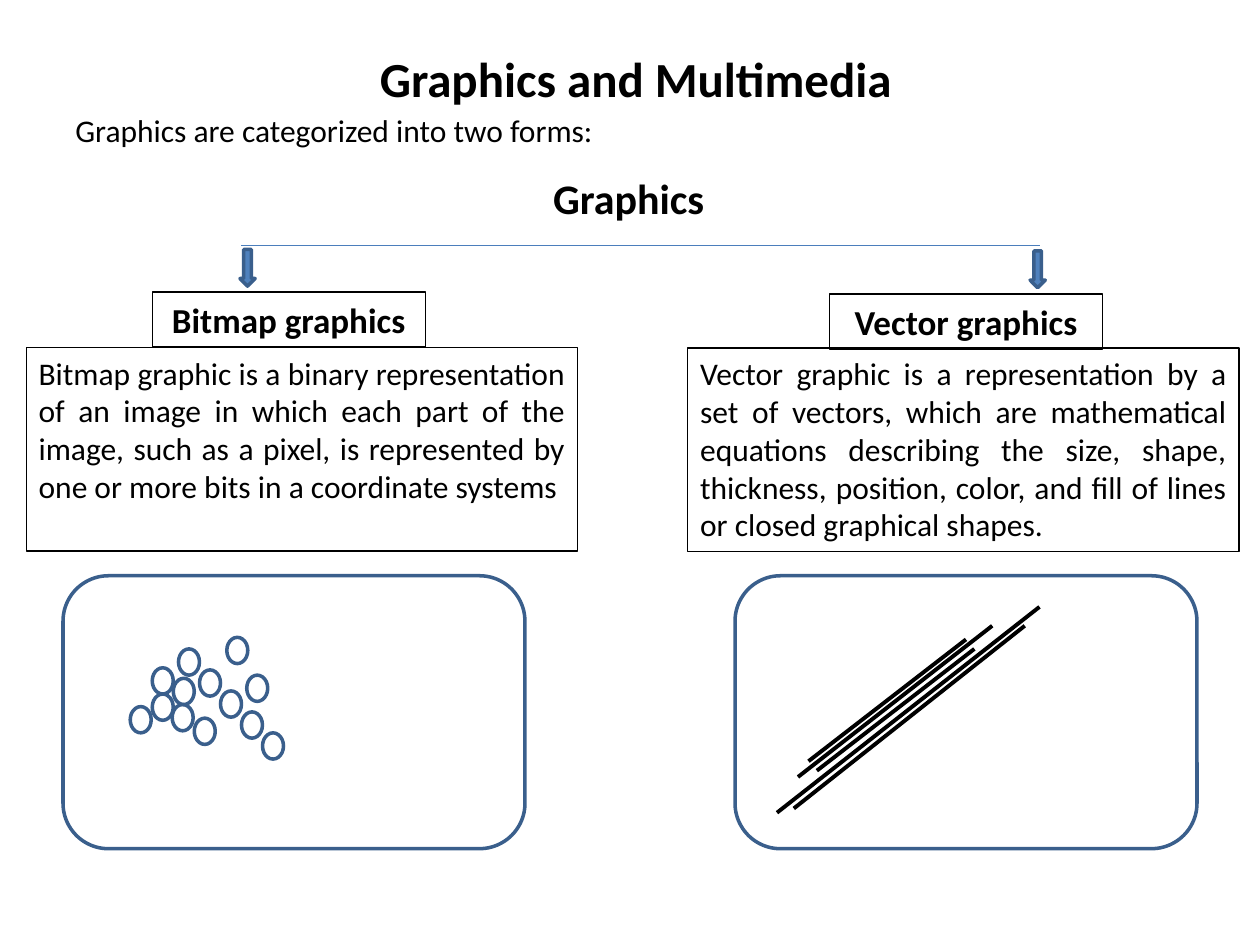
from lxml.etree import SubElement
from pptx import Presentation
from pptx.dml.color import RGBColor
from pptx.enum.shapes import MSO_CONNECTOR, MSO_SHAPE
from pptx.enum.text import PP_ALIGN
from pptx.oxml.ns import qn
from pptx.util import Inches, Pt

COLORS = {"text": "000000", "fill": "4F81BD", "outline": "3A5F8C", "branch": "4B7EBC"}
FONT = "Calibri"

# The page is a grid of 120 columns by 90 rows
CELL = Inches(10) / 120

BRANCHES = [
    {
        "header": "Bitmap graphics",
        "body": "Bitmap graphic is a binary representation of an image in which each "
                "part of the image, such as a pixel, is represented by one or more bits "
                "in a coordinate systems",
        "arrow": (22.85, 23.75), "header_at": (14.5, 27.8),
        "body_at": (2.5, 33.1), "panel_at": (6, 54.83),
    },
    {
        "header": "Vector graphics",
        "body": "Vector graphic is a representation by a set of vectors, which are "
                "mathematical equations describing the size, shape, thickness, position, "
                "color, and fill of lines or closed graphical shapes.",
        "arrow": (98.1, 23.9), "header_at": (79, 28),
        "body_at": (65.5, 33.15), "panel_at": (70, 54.83),
    },
]

# Scattered pixels, then a diagonal row of five
PIXELS = [(12.4, 67.3), (14.5, 66.1), (14.5, 63.6), (16.5, 64.6), (18.5, 68.4),
          (16.4, 67.1), (23.5, 64.3), (21.6, 60.7)]
PIXELS += [(17 + 2 * step, 61.8 + 2 * step) for step in range(5)]

STROKES = [((77.8, 73.4), (92.8, 61.8)), ((76, 74), (94.5, 59.6)),
           ((75.6, 77), (97.6, 59.6)), ((74, 77.4), (99, 57.8)),
           ((77, 72.5), (92, 60.9))]


def cells(*counts):
    return [round(count * CELL) for count in counts]


def color(name):
    return RGBColor.from_string(COLORS[name])


def set_line(line, name, width):
    line.color.rgb = color(name)
    line.width = Pt(width)


def add_text(page, text, place, size, bold=False, align=PP_ALIGN.LEFT, border=False):
    box = page.shapes.add_textbox(*cells(*place))
    box.text_frame.word_wrap = True
    if border:
        set_line(box.line, "text", 0.75)
    para = box.text_frame.paragraphs[0]
    para.text = text
    para.alignment = align
    font = para.font
    font.name, font.size, font.bold = FONT, Pt(size), bold
    font.color.rgb = color("text")


def add_outline(page, kind, place, fill=None):
    shape = page.shapes.add_shape(kind, *cells(*place))
    shape.shadow.inherit = False
    if fill:
        shape.fill.solid()
        shape.fill.fore_color.rgb = color(fill)
    else:
        shape.fill.background()
    set_line(shape.line, "outline", 2)


def add_line(page, start, end, name, width):
    line = page.shapes.add_connector(MSO_CONNECTOR.STRAIGHT, *cells(*start, *end))
    set_line(line.line, name, width)
    SubElement(line._element.spPr, qn("a:effectLst"))


def add_branch(page, branch):
    add_outline(page, MSO_SHAPE.DOWN_ARROW, (*branch["arrow"], 1.45, 3.5), "fill")
    add_text(page, branch["header"], (*branch["header_at"], 26, 5.25), 20,
             bold=True, align=PP_ALIGN.CENTER, border=True)
    add_text(page, branch["body"], (*branch["body_at"], 52.5, 19.4), 18,
             align=PP_ALIGN.JUSTIFY, border=True)
    add_outline(page, MSO_SHAPE.ROUNDED_RECTANGLE, (*branch["panel_at"], 44, 26))


def main():
    deck = Presentation()
    deck.slide_width, deck.slide_height = cells(120, 90)
    page = deck.slides.add_slide(deck.slide_layouts[6])

    # Headings
    add_text(page, "Graphics and Multimedia", (35, 4, 55, 6.9), 28, bold=True)
    add_text(page, "Graphics are categorized into two forms:", (6, 10, 53, 4.8), 18)
    add_text(page, "Graphics", (51.5, 15.85, 17, 6), 24, bold=True)

    # Two branches below a common line
    add_line(page, (23, 23.4), (99, 23.4), "branch", 0.75)
    for branch in BRANCHES:
        add_branch(page, branch)

    # Pixels in the left panel, strokes in the right one
    for pixel in PIXELS:
        add_outline(page, MSO_SHAPE.FLOWCHART_CONNECTOR, (*pixel, 2, 2.5))
    for start, end in STROKES:
        add_line(page, start, end, "text", 2.25)

    deck.save("out.pptx")


if __name__ == "__main__":
    main()
